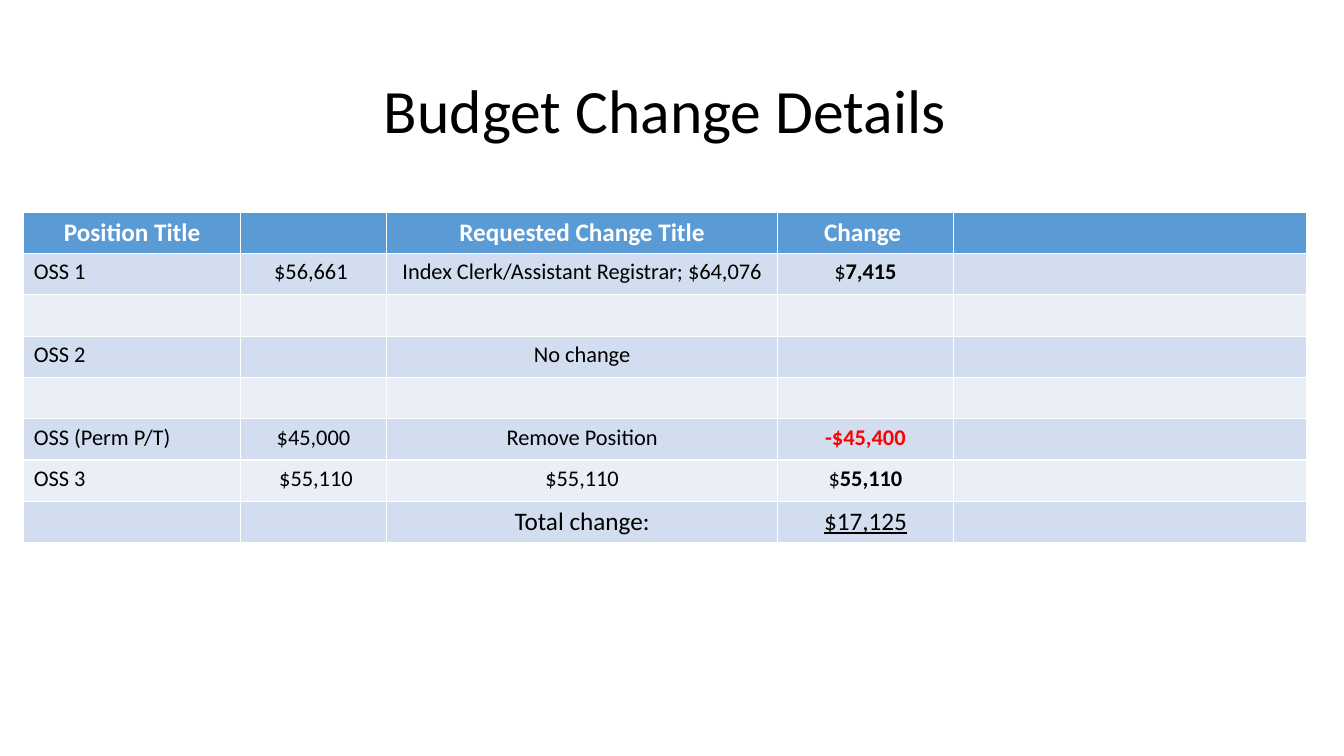
from pptx import Presentation
from pptx.dml.color import RGBColor
from pptx.enum.text import MSO_ANCHOR, PP_ALIGN
from pptx.util import Cm, Pt

BLACK = RGBColor(0x00, 0x00, 0x00)
WHITE = RGBColor(0xFF, 0xFF, 0xFF)
RED = RGBColor(0xFF, 0x00, 0x00)
HEADER_BLUE = RGBColor(0x5B, 0x9B, 0xD5)
BAND_DARK = RGBColor(0xD2, 0xDE, 0xEF)
BAND_LIGHT = RGBColor(0xEA, 0xEF, 0xF7)

# Text formats
TITLE = {"size": Pt(44), "color": BLACK}
HEADER = {"size": Pt(18), "color": WHITE, "bold": True}
BODY = {"size": Pt(16), "color": BLACK, "bold": False}
STRONG = {**BODY, "bold": True}
CUT = {**STRONG, "color": RED}
TOTAL = {**BODY, "size": Pt(18)}
TOTAL_SUM = {**TOTAL, "underline": True}


def add_span(para, text, text_format):
    span = para.add_run()
    span.text = text
    span.font.name = "Calibri"
    for name, value in text_format.items():
        if name == "color":
            span.font.color.rgb = value
        else:
            setattr(span.font, name, value)


deck = Presentation()
deck.slide_width, deck.slide_height = Cm(33.87), Cm(19.05)
page = deck.slides.add_slide(deck.slide_layouts[5])

# Title
title = page.shapes.title
title.left, title.top = Cm(2.33), Cm(1.01)
title.width, title.height = Cm(29.21), Cm(3.68)
title.text_frame.vertical_anchor = MSO_ANCHOR.MIDDLE
title_para = title.text_frame.paragraphs[0]
title_para.alignment = PP_ALIGN.CENTER
title_para.line_spacing = 0.9
add_span(title_para, "Budget Change Details ", TITLE)

# Table contents: each cell is a list of (text, format) spans
budget_rows = [
    [[("Position Title", HEADER)], [], [("Requested Change Title", HEADER)],
     [("Change ", HEADER)], []],
    [[("OSS 1", BODY)], [("$56,661 ", BODY)],
     [("Index Clerk/Assistant Registrar; $64,076", BODY)],
     [("$", BODY), ("7,415", STRONG)], []],
    [[], [], [], [], []],
    [[("OSS 2", BODY)], [], [("No change", BODY)], [], []],
    [[], [], [], [], []],
    [[("OSS (Perm P/T)", BODY)], [("$45,000", BODY)],
     [("Remove Position", BODY)], [("-$45,400", CUT)], []],
    [[("OSS 3", BODY)], [(" $55,110", BODY)], [("$55,110", BODY)],
     [("$", BODY), ("55,110", STRONG)], []],
    [[], [], [("Total change:", TOTAL)], [("$17,125", TOTAL_SUM)], []],
]
column_widths = [5.46, 3.68, 9.86, 4.42, 8.91]
row_height = 1.04

# Budget table
table = page.shapes.add_table(
    len(budget_rows), len(column_widths), Cm(0.6), Cm(5.35),
    Cm(sum(column_widths)), Cm(row_height * len(budget_rows))).table
for column, width in zip(table.columns, column_widths):
    column.width = Cm(width)

for row_index, budget_row in enumerate(budget_rows):
    table.rows[row_index].height = Cm(row_height)
    if row_index == 0:
        row_fill = HEADER_BLUE
    else:
        row_fill = BAND_DARK if row_index % 2 else BAND_LIGHT
    for column_index, spans in enumerate(budget_row):
        cell = table.cell(row_index, column_index)
        cell.fill.solid()
        cell.fill.fore_color.rgb = row_fill
        para = cell.text_frame.paragraphs[0]
        centred = row_index == 0 or column_index > 0
        para.alignment = PP_ALIGN.CENTER if centred else PP_ALIGN.LEFT
        for text, text_format in spans:
            add_span(para, text, text_format)

deck.save("out.pptx")
